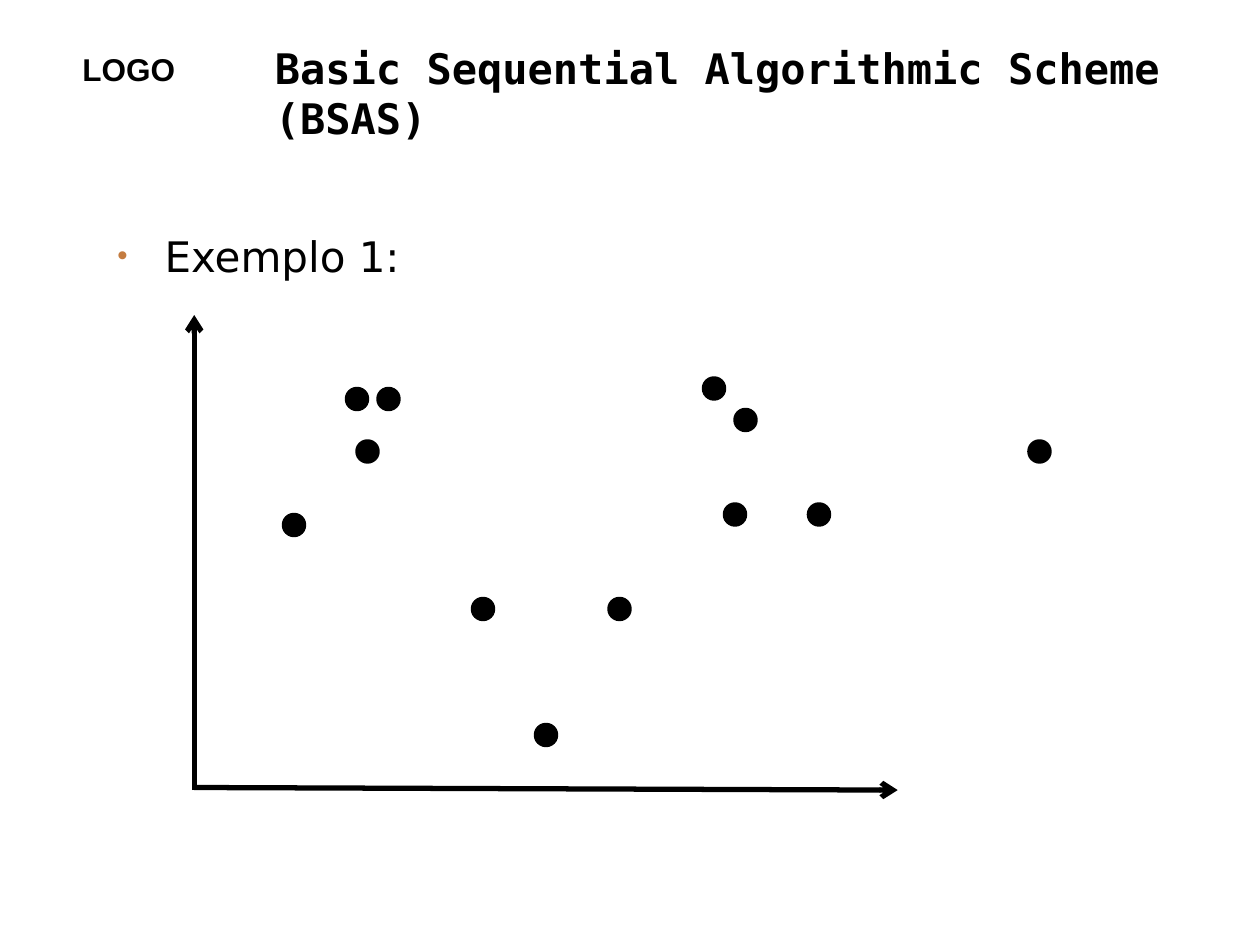
from lxml.etree import SubElement
from pptx import Presentation
from pptx.dml.color import RGBColor
from pptx.enum.shapes import MSO_CONNECTOR, MSO_SHAPE
from pptx.enum.text import MSO_ANCHOR
from pptx.oxml.ns import qn
from pptx.util import Pt

BLACK = RGBColor(0x00, 0x00, 0x00)
BULLET_COLOR = RGBColor(0xC4, 0x7C, 0x40)
DOT_SIZE = 12
DOT_OFFSETS = [
    (87, 42), (105, 42), (93, 72), (51, 114),
    (291, 36), (309, 54), (303, 108), (351, 108),
    (159, 162), (477, 72), (237, 162), (195, 234),
]


def add_text(slide, box, text, font_name, size, bold=False, wrap=True):
    """Add a one-run text box and return its shape."""
    shape = slide.shapes.add_textbox(*map(Pt, box))
    shape.text_frame.word_wrap = wrap
    run = shape.text_frame.paragraphs[0].add_run()
    run.text = text
    run.font.name = font_name
    run.font.size = Pt(size)
    run.font.bold = bold
    run.font.color.rgb = BLACK
    return shape


def add_header(slide, box):
    """Place the label on the left and the title on the right of the box."""
    left, top, width, height = box
    add_text(slide, (left, top + 7, 68, 29), "LOGO", "Arial", 18, True, False)
    title = add_text(
        slide, (left + 110, top, width - 110, height),
        "Basic Sequential Algorithmic Scheme (BSAS)",
        "DejaVu Sans Mono", 24, True)
    title.text_frame.vertical_anchor = MSO_ANCHOR.MIDDLE


def add_bullet_text(slide, box):
    """Place the bulleted example heading in the box."""
    shape = add_text(slide, box, "Exemplo 1:", "DejaVu Sans", 24)
    properties = shape.text_frame.paragraphs[0]._p.get_or_add_pPr()
    properties.set("marL", str(Pt(27)))
    properties.set("indent", str(Pt(-27)))
    color = SubElement(properties, qn("a:buClr"))
    SubElement(color, qn("a:srgbClr"), val=str(BULLET_COLOR))
    SubElement(properties, qn("a:buSzPct"), val="70000")
    SubElement(properties, qn("a:buFont"), typeface="Arial")
    SubElement(properties, qn("a:buChar"), char="•")


def add_axis(slide, start, end):
    """Add a black axis with an arrowhead at its end."""
    axis = slide.shapes.add_connector(
        MSO_CONNECTOR.STRAIGHT, *map(Pt, start + end))
    axis.line.color.rgb = BLACK
    axis.line.width = Pt(3)
    SubElement(axis.line._get_or_add_ln(), qn("a:tailEnd"), type="arrow")
    SubElement(axis._element.spPr, qn("a:effectLst"))


def add_dot(slide, left, top):
    """Add one black data point."""
    dot = slide.shapes.add_shape(
        MSO_SHAPE.OVAL, Pt(left), Pt(top), Pt(DOT_SIZE), Pt(DOT_SIZE))
    dot.shadow.inherit = False
    dot.fill.solid()
    dot.fill.fore_color.rgb = BLACK
    dot.line.color.rgb = BLACK
    dot.line.width = Pt(2)


def add_scatter(slide, box):
    """Place the data points and the two axes relative to the box."""
    left, top, width, height = box
    bottom = top + height
    for across, down in DOT_OFFSETS:
        add_dot(slide, left + across, top + down)
    add_axis(slide, (left, bottom), (left, top))
    add_axis(slide, (left, bottom - 1.5), (left + width, bottom))


def main():
    """Build and save the slide."""
    presentation = Presentation()
    presentation.slide_width = Pt(720)
    presentation.slide_height = Pt(540)
    slide = presentation.slides.add_slide(presentation.slide_layouts[6])
    add_header(slide, (40, 18, 644, 70))
    add_bullet_text(slide, (60, 128, 595, 323))
    add_scatter(slide, (111, 180, 402, 271.5))
    presentation.save("out.pptx")


if __name__ == "__main__":
    main()
